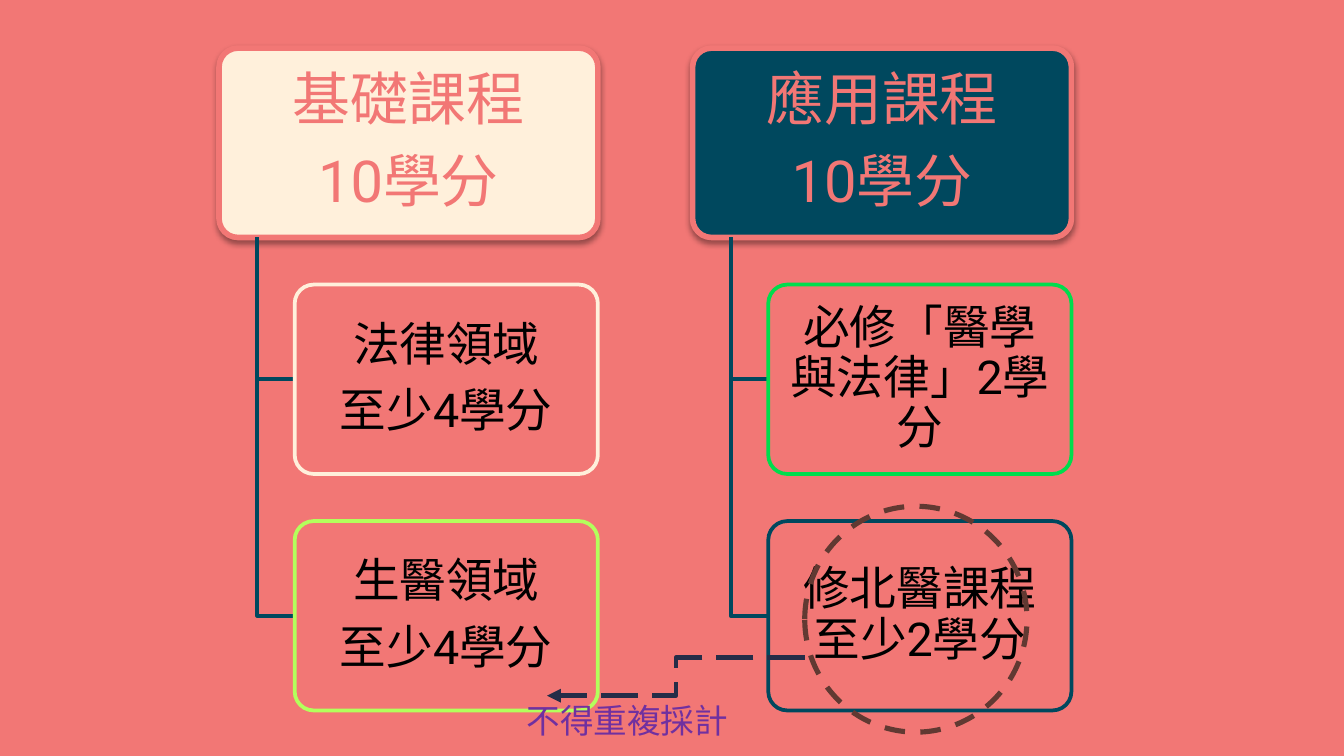
import pptx
import pptx.util
import pptx.dml.color
import pptx.enum.dml
import pptx.enum.shapes
import pptx.enum.text
import pptx.oxml
import pptx.oxml.ns

Cm = pptx.util.Cm
Pt = pptx.util.Pt
RGB = pptx.dml.color.RGBColor
Kind = pptx.enum.shapes.MSO_SHAPE
Dash = pptx.enum.dml.MSO_LINE
NS = pptx.oxml.ns.nsdecls("a")

CORAL = RGB(0xF2, 0x77, 0x75)
CREAM = RGB(0xFF, 0xF0, 0xDB)
TEAL = RGB(0x00, 0x48, 0x5E)
LIME = RGB(0xB3, 0xFF, 0x5C)
GREEN = RGB(0x00, 0xDD, 0x4D)
BROWN = RGB(0x61, 0x39, 0x32)
NAVY = RGB(0x25, 0x2D, 0x48)
PURPLE = RGB(0x70, 0x30, 0xA0)
BLACK = RGB(0, 0, 0)
FONT = "Roboto"

TREES = [
    (["基礎課程", "10學分"], CREAM, [
        (["法律領域", "至少4學分"], CREAM),
        (["生醫領域", "至少4學分"], LIME),
    ]),
    (["應用課程", "10學分"], TEAL, [
        (["必修「醫學與法律」2學分"], GREEN),
        (["修北醫課程至少2學分"], TEAL),
    ]),
]
NOTE = "不得重複採計"

LEFT, TOP = 4.14, 0.91
WIDE, HIGH = 7.16, 3.58
STEP, PITCH = 8.95, 4.47
STEM, INDENT = 0.72, 1.43


def write(para, text, size, color):
    run = para.add_run()
    run.text = text
    run.font.name = FONT
    run.font.size = Pt(size)
    run.font.color.rgb = color


def add_box(x, y, wide, lines, size, ink, fill, edge, width, inset):
    box = slide.shapes.add_shape(Kind.ROUNDED_RECTANGLE, Cm(x), Cm(y), Cm(wide), Cm(HIGH))
    box.adjustments[0] = 0.1
    box.shadow.inherit = False
    box.fill.solid()
    box.fill.fore_color.rgb = fill
    box.line.color.rgb = edge
    box.line.width = Pt(width)
    frame = box.text_frame
    frame.word_wrap = True
    frame.vertical_anchor = pptx.enum.text.MSO_ANCHOR.MIDDLE
    frame.margin_left = frame.margin_right = Cm(inset[0])
    frame.margin_top = frame.margin_bottom = Cm(inset[1])
    for i, line in enumerate(lines):
        para = frame.add_paragraph() if i else frame.paragraphs[0]
        para.alignment = pptx.enum.text.PP_ALIGN.CENTER
        para.line_spacing = 0.9
        para.space_after = Pt(size * 0.35)
        write(para, line, size, ink)
    return box


def add_shade(box):
    effect = box._element.spPr.find(pptx.oxml.ns.qn("a:effectLst"))
    effect.append(pptx.oxml.parse_xml(
        f'<a:outerShdw {NS} blurRad="40000" dist="20000" dir="5400000" rotWithShape="0">'
        '<a:srgbClr val="000000"><a:alpha val="38000"/></a:srgbClr></a:outerShdw>'))


def add_stem(x, y, reach, end):
    pen = slide.shapes.build_freeform(Cm(x), Cm(y))
    pen.add_line_segments([(Cm(x), Cm(end)), (Cm(reach), Cm(end))], close=False)
    stem = pen.convert_to_shape()
    stem.shadow.inherit = False
    stem.fill.background()
    stem.line.color.rgb = TEAL
    stem.line.width = Pt(2)


deck = pptx.Presentation()
deck.slide_width, deck.slide_height = Cm(25.4), Cm(14.29)
slide = deck.slides.add_slide(deck.slide_layouts[6])
slide.background.fill.solid()
slide.background.fill.fore_color.rgb = CORAL

for col, (head, tint, kids) in enumerate(TREES):
    x = LEFT + col * STEP
    add_shade(add_box(x, TOP, WIDE, head, 31, CORAL, tint, CORAL, 3, (0.15, 0.1)))
    for row, (lines, edge) in enumerate(kids, 1):
        y = TOP + row * PITCH
        add_stem(x + STEM, TOP + HIGH, x + INDENT, y + HIGH / 2)
        box = add_box(x + INDENT, y, WIDE - INDENT, lines, 25, BLACK, CORAL, edge, 2, (0.12, 0.08))
        tone = box._element.spPr.find(".//" + pptx.oxml.ns.qn("a:srgbClr"))
        tone.append(pptx.oxml.parse_xml(f'<a:alpha {NS} val="90000"/>'))

ring = slide.shapes.add_shape(Kind.OVAL, Cm(15.21), Cm(9.57), Cm(4.2), Cm(4.27))
ring.shadow.inherit = False
ring.fill.background()
ring.line.color.rgb = BROWN
ring.line.width = Pt(2.75)
ring.line.dash_style = Dash.DASH

link = slide.shapes.add_connector(
    pptx.enum.shapes.MSO_CONNECTOR.ELBOW, Cm(15.21), Cm(12.43), Cm(10.34), Cm(13.15))
link.line.color.rgb = NAVY
link.line.width = Pt(2.5)
link.line.dash_style = Dash.LONG_DASH
link.line._get_or_add_ln().append(pptx.oxml.parse_xml(f'<a:tailEnd {NS} type="triangle"/>'))
link._element.spPr.append(pptx.oxml.parse_xml(f"<a:effectLst {NS}/>"))

note = slide.shapes.add_textbox(Cm(9.7), Cm(13.1), Cm(4.37), Cm(1.02))
note.text_frame.word_wrap = False
note.text_frame.auto_size = pptx.enum.text.MSO_AUTO_SIZE.SHAPE_TO_FIT_TEXT
write(note.text_frame.paragraphs[0], NOTE, 18, PURPLE)

deck.save("out.pptx")
